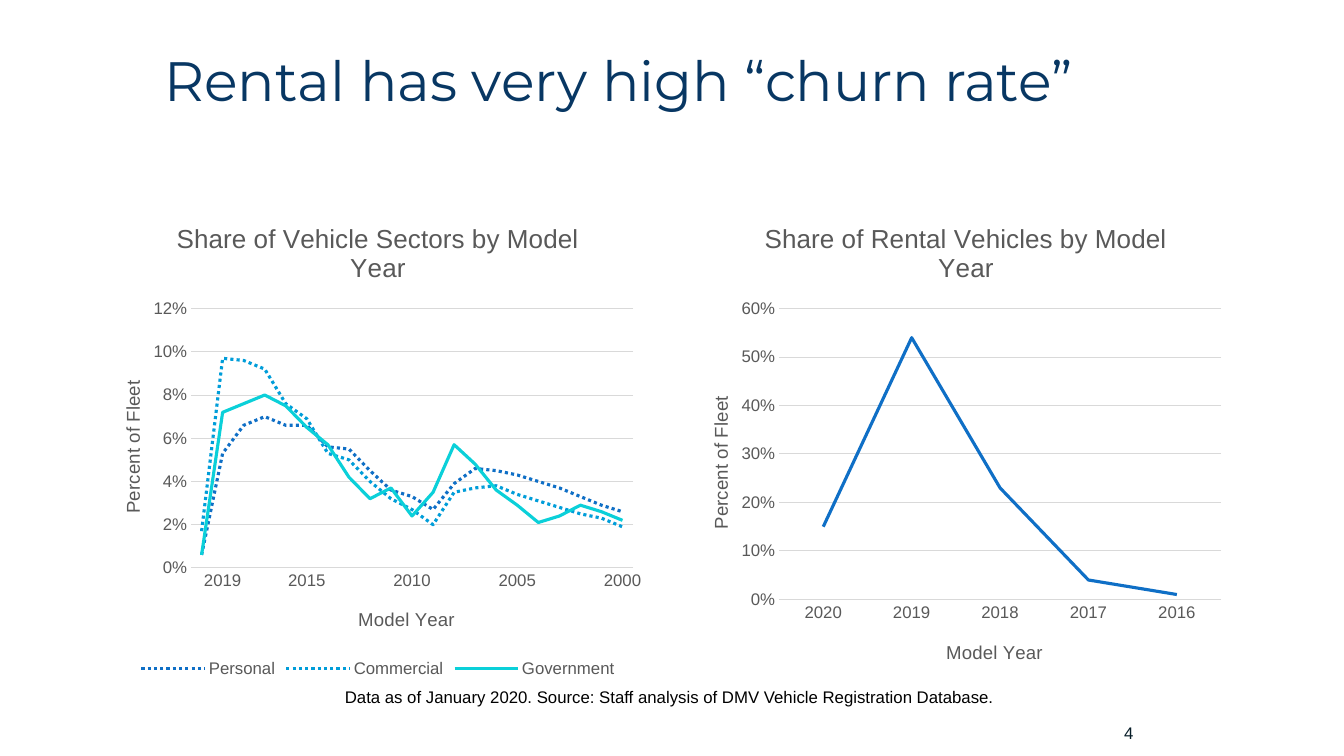
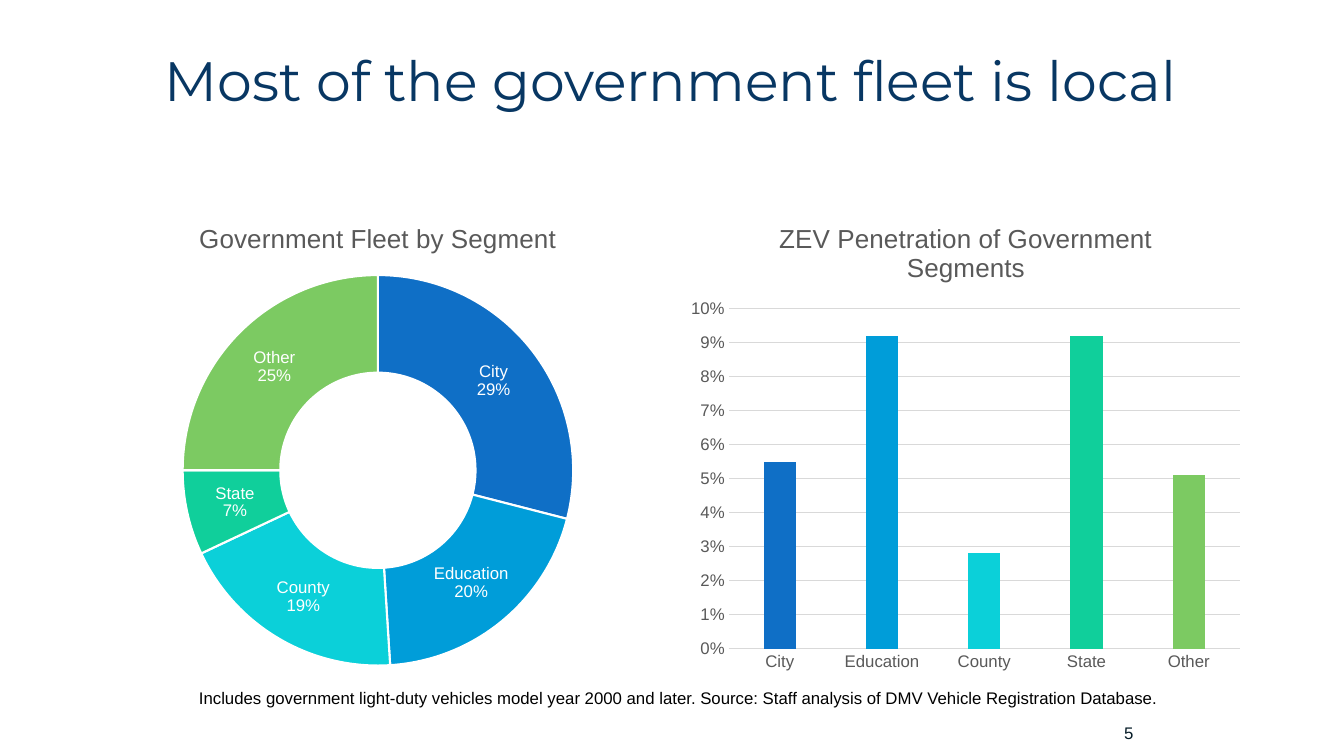
import dataclasses

import lxml.etree
import pptx
import pptx.chart.data
import pptx.dml.color
import pptx.enum.chart
import pptx.enum.dml
import pptx.enum.text
import pptx.oxml.ns
import pptx.util

PX = 9525  # EMU in one px
CHART_TYPE = pptx.enum.chart.XL_CHART_TYPE


@dataclasses.dataclass(frozen=True)
class Theme:
    body_font: str = "Arial"
    title_font: str = "Montserrat"
    title: str = "083763"
    number: str = "071D28"
    caption: str = "000000"
    chart_text: str = "595959"
    grid: str = "D9D9D9"
    white: str = "FFFFFF"
    accents: tuple = ("0F6FC6", "009DD9", "0BD0D9", "10CF9B", "7CCA62")
    title_size: float = 39.6
    chart_title_size: float = 18.6
    axis_title_size: float = 13.3
    text_size: float = 12
    series_width: float = 2.25
    slice_width: float = 1.5
    grid_width: float = 0.75


THEME = Theme()

SLIDE_SIZE = (1280, 720)
TITLE_BOX = (147, 25, 1045, 109)
NUMBER_BOX = (904, 679, 185, 38)
CHART_LEFTS = (88, 648)
CHART_TOP, CHART_WIDTH, CHART_HEIGHT = 192, 544, 457

SEGMENTS = ["City", "Education", "County", "State", "Other"]
SECTOR_YEARS = [
    str(year) if year == 2019 or (year % 5 == 0 and year < 2020) else ""
    for year in range(2020, 1999, -1)
]

# Plot boxes and axis title corners are px inside the chart frame.
SLIDES = [
    {
        "number": "4",
        "title": "Rental has very high “churn rate”",
        "caption": "Data as of January 2020. Source: Staff analysis of DMV Vehicle Registration Database.",
        "caption_box": (319, 649, 643, 29),
        "charts": [
            {
                "type": CHART_TYPE.LINE,
                "title": "Share of Vehicle Sectors by Model Year",
                "categories": SECTOR_YEARS,
                "series": {
                    "Personal": [0.006, 0.053, 0.066, 0.07, 0.066, 0.066, 0.056,
                                 0.055, 0.045, 0.036, 0.033, 0.027, 0.039, 0.046,
                                 0.045, 0.043, 0.04, 0.037, 0.033, 0.029, 0.026],
                    "Commercial": [0.017, 0.097, 0.096, 0.092, 0.076, 0.069, 0.053,
                                   0.05, 0.04, 0.032, 0.027, 0.02, 0.035, 0.037,
                                   0.038, 0.034, 0.031, 0.028, 0.025, 0.023, 0.019],
                    "Government": [0.006, 0.072, 0.076, 0.08, 0.075, 0.065, 0.057,
                                   0.042, 0.032, 0.037, 0.024, 0.035, 0.057, 0.048,
                                   0.036, 0.029, 0.021, 0.024, 0.029, 0.026, 0.022],
                },
                "dotted": ("Personal", "Commercial"),
                "legend": True,
                "scale": (0.12, 0.02),
                "plot_box": (94, 102, 421, 247),
                "axis_titles": (("Model Year", (250, 383)), ("Percent of Fleet", (24, 167))),
            },
            {
                "type": CHART_TYPE.LINE,
                "title": "Share of Rental Vehicles by Model Year",
                "categories": ["2020", "2019", "2018", "2017", "2016"],
                "series": {"Series 1": [0.15, 0.54, 0.23, 0.04, 0.01]},
                "scale": (0.6, 0.1),
                "plot_box": (94, 102, 421, 277),
                "axis_titles": (("Model Year", (250, 415)), ("Percent of Fleet", (24, 182))),
            },
        ],
    },
    {
        "number": "5",
        "title": "Most of the government fleet is local",
        "caption": "Includes government light-duty vehicles model year 2000 and later. "
                   "Source: Staff analysis of DMV Vehicle Registration Database.",
        "caption_box": (180, 650, 935, 29),
        "charts": [
            {
                "type": CHART_TYPE.DOUGHNUT,
                "title": "Government Fleet by Segment",
                "categories": SEGMENTS,
                "series": {"Government Fleet by Segment": [29, 20, 19, 7, 25]},
                "plot_box": (86, 70, 372, 372),
            },
            {
                "type": CHART_TYPE.COLUMN_CLUSTERED,
                "title": "ZEV Penetration of Government Segments",
                "categories": SEGMENTS,
                "series": {
                    "ZEV Penetration of Government Segments": [0.055, 0.092, 0.028, 0.092, 0.051],
                },
                "scale": (0.1, 0.01),
                "plot_box": (46, 102, 487, 324),
            },
        ],
    },
]


def to_emu(box):
    return [length * PX for length in box]


def set_values(target, values):
    for name, value in values.items():
        setattr(target, name, value)


def format_font(font, size, color, name=THEME.body_font):
    set_values(font, {"name": name, "size": pptx.util.Pt(size), "bold": False})
    font.color.rgb = pptx.dml.color.RGBColor.from_string(color)


def format_line(line, color, width):
    line.color.rgb = pptx.dml.color.RGBColor.from_string(color)
    line.width = pptx.util.Pt(width)


def fill_solid(fill, color):
    fill.solid()
    fill.fore_color.rgb = pptx.dml.color.RGBColor.from_string(color)


def add_element(parent, tag, value=None):
    element = lxml.etree.SubElement(parent, pptx.oxml.ns.qn(tag))
    if value is not None:
        element.set("val", str(value))
    return element


def set_layout(parent, box, inner=False):
    """Fix a plot area (x, y, w, h) or a title (x, y) inside the chart frame."""
    for old_layout in parent.findall(pptx.oxml.ns.qn("c:layout")):
        parent.remove(old_layout)
    layout = add_element(parent, "c:layout")
    manual = add_element(layout, "c:manualLayout")
    if inner:
        add_element(manual, "c:layoutTarget", "inner")
    for key in ("xMode", "yMode"):
        add_element(manual, f"c:{key}", "edge")
    for key, length, total in zip("xywh", box, (CHART_WIDTH, CHART_HEIGHT) * 2):
        add_element(manual, f"c:{key}", length / total)
    text = parent.find(pptx.oxml.ns.qn("c:tx"))
    parent.insert(0 if text is None else parent.index(text) + 1, layout)


def set_title_text(title, text, size):
    title.text_frame.text = text
    format_font(title.text_frame.paragraphs[0].runs[0].font, size, THEME.chart_text)


def format_axes(chart, content):
    category_axis, value_axis = chart.category_axis, chart.value_axis
    maximum, step = content["scale"]
    set_values(value_axis, {"minimum_scale": 0, "maximum_scale": maximum,
                            "major_unit": step, "has_major_gridlines": True})
    set_values(value_axis.tick_labels, {"number_format": "0%", "number_format_is_linked": False})
    format_line(value_axis.major_gridlines.format.line, THEME.grid, THEME.grid_width)
    value_axis.format.line.fill.background()
    format_line(category_axis.format.line, THEME.grid, THEME.grid_width)
    for axis in (category_axis, value_axis):
        axis.major_tick_mark = pptx.enum.chart.XL_TICK_MARK.NONE
        format_font(axis.tick_labels.font, THEME.text_size, THEME.chart_text)
    for axis, (text, corner) in zip((category_axis, value_axis), content.get("axis_titles", ())):
        set_title_text(axis.axis_title, text, THEME.axis_title_size)
        set_layout(axis.axis_title._element, corner)
        if axis is value_axis:
            body = axis.axis_title.text_frame._txBody.bodyPr
            body.set("rot", "-5400000")
            body.set("vert", "horz")


def format_lines(chart, content):
    for series, color in zip(chart.plots[0].series, THEME.accents):
        series.smooth = False
        format_line(series.format.line, color, THEME.series_width)
        if series.name in content.get("dotted", ()):
            series.format.line.dash_style = pptx.enum.dml.MSO_LINE.ROUND_DOT
    for crossing in chart._chartSpace.xpath(".//c:valAx/c:crossBetween"):
        crossing.set("val", "midCat")
    for multi_level in chart._chartSpace.xpath(".//c:catAx/c:noMultiLvlLbl"):
        multi_level.addprevious(add_element(multi_level.getparent(), "c:tickLblSkip", 1))


def color_points(series):
    for index, color in enumerate(THEME.accents):
        fill_solid(series.points[index].format.fill, color)


def format_doughnut(chart):
    series = chart.plots[0].series[0]
    color_points(series)
    for index in range(len(SEGMENTS)):
        format_line(series.points[index].format.line, THEME.white, THEME.slice_width)
    labels = series.data_labels
    set_values(labels, {"show_value": False, "show_percentage": True, "show_category_name": True,
                        "number_format": "0%", "number_format_is_linked": False})
    format_font(labels.font, THEME.text_size, THEME.white)
    separator = add_element(labels._element, "c:separator")
    separator.text = "\n"
    labels._element.find(pptx.oxml.ns.qn("c:showBubbleSize")).addnext(separator)


def add_chart(slide, left, content):
    data = pptx.chart.data.CategoryChartData(number_format="General")
    data.categories = content["categories"]
    for name, values in content["series"].items():
        data.add_series(name, values)
    box = to_emu((left, CHART_TOP, CHART_WIDTH, CHART_HEIGHT))
    chart = slide.shapes.add_chart(content["type"], *box, data).chart
    set_values(chart, {"has_title": True, "has_legend": content.get("legend", False)})
    format_font(chart.font, THEME.text_size, THEME.chart_text)
    set_title_text(chart.chart_title, content["title"], THEME.chart_title_size)
    chart.chart_title.include_in_layout = False
    if chart.has_legend:
        set_values(chart.legend, {"position": pptx.enum.chart.XL_LEGEND_POSITION.BOTTOM,
                                  "include_in_layout": False})
        format_font(chart.legend.font, THEME.text_size, THEME.chart_text)
    plot = chart.plots[0]
    plot.vary_by_categories = content["type"] == CHART_TYPE.DOUGHNUT
    if content["type"] == CHART_TYPE.DOUGHNUT:
        format_doughnut(chart)
    else:
        format_axes(chart, content)
    if content["type"] == CHART_TYPE.LINE:
        format_lines(chart, content)
    if content["type"] == CHART_TYPE.COLUMN_CLUSTERED:
        set_values(plot, {"gap_width": 219, "overlap": -27})
        color_points(plot.series[0])
    set_layout(chart._chartSpace.chart.plotArea, content["plot_box"], inner=True)


def set_title(slide, text):
    title = slide.shapes.title
    set_values(title, dict(zip(("left", "top", "width", "height"), to_emu(TITLE_BOX))))
    title.text_frame.text = text
    set_values(title.text_frame, {"vertical_anchor": pptx.enum.text.MSO_ANCHOR.MIDDLE,
                                  "auto_size": pptx.enum.text.MSO_AUTO_SIZE.NONE,
                                  "word_wrap": True})
    paragraph = title.text_frame.paragraphs[0]
    set_values(paragraph, {"alignment": pptx.enum.text.PP_ALIGN.LEFT, "line_spacing": 0.9})
    format_font(paragraph.runs[0].font, THEME.title_size, THEME.title, THEME.title_font)


def add_text(slide, box, text, color, alignment, frame_format):
    frame = slide.shapes.add_textbox(*to_emu(box)).text_frame
    frame.text = text
    set_values(frame, frame_format)
    frame.paragraphs[0].alignment = alignment
    format_font(frame.paragraphs[0].runs[0].font, THEME.text_size, color)


def add_slide(presentation, content):
    slide = presentation.slides.add_slide(presentation.slide_layouts[5])
    set_title(slide, content["title"])
    for left, chart_content in zip(CHART_LEFTS, content["charts"]):
        add_chart(slide, left, chart_content)
    add_text(slide, content["caption_box"], content["caption"], THEME.caption,
             pptx.enum.text.PP_ALIGN.LEFT,
             {"word_wrap": False, "auto_size": pptx.enum.text.MSO_AUTO_SIZE.SHAPE_TO_FIT_TEXT})
    add_text(slide, NUMBER_BOX, content["number"], THEME.number,
             pptx.enum.text.PP_ALIGN.RIGHT,
             {"word_wrap": True, "vertical_anchor": pptx.enum.text.MSO_ANCHOR.MIDDLE})


def main():
    presentation = pptx.Presentation()
    presentation.slide_width, presentation.slide_height = to_emu(SLIDE_SIZE)
    for content in SLIDES:
        add_slide(presentation, content)
    presentation.save("out.pptx")


if __name__ == "__main__":
    main()
